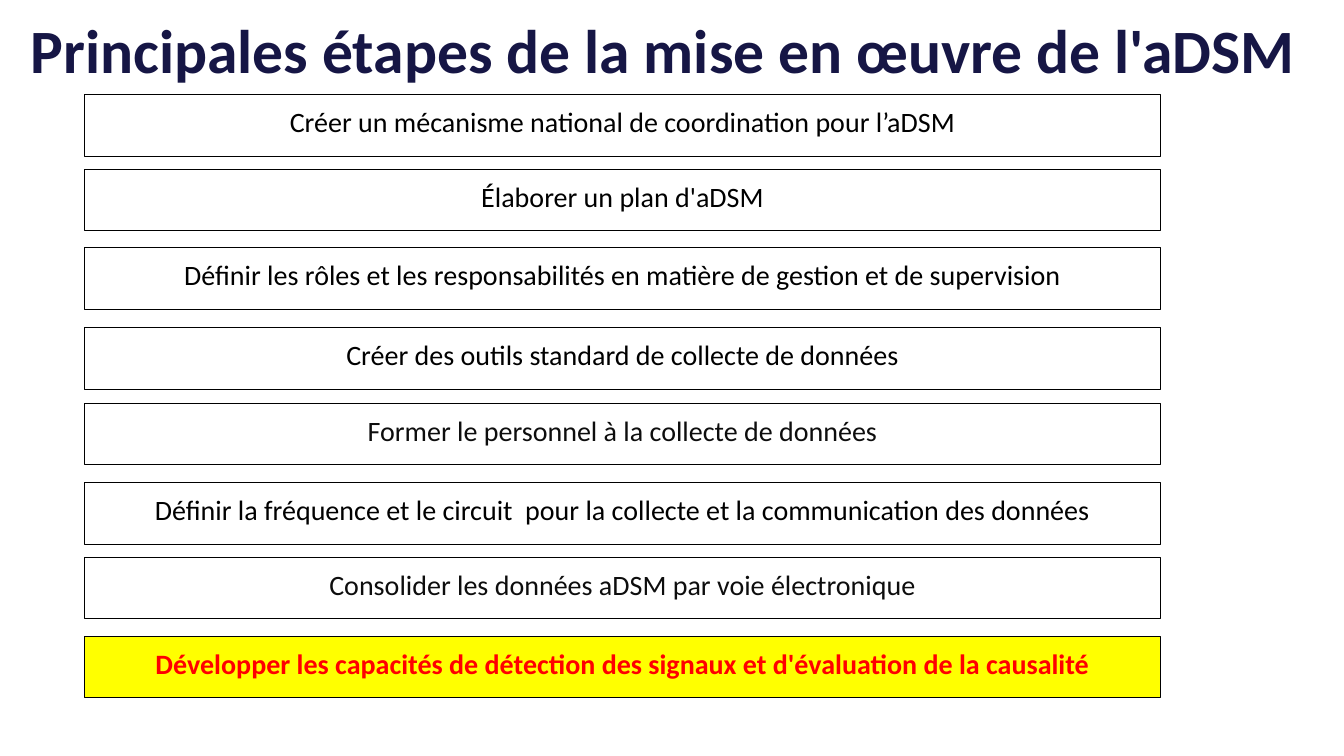
import pptx
import pptx.dml.color
import pptx.enum.shapes
import pptx.enum.text
import pptx.util

Inches = pptx.util.Inches
Pt = pptx.util.Pt
ANCHOR = pptx.enum.text.MSO_ANCHOR

COLORS = {
    "navy": "161645",
    "black": "000000",
    "charcoal": "0D0D0D",
    "white": "FFFFFF",
    "yellow": "FFFF00",
    "red": "FF0000",
}

TITLE = "Principales étapes de la mise en œuvre de l'aDSM"
PLAIN = {"color": "black"}
FILLED = {"fill": "white", "color": "charcoal"}
HIGHLIGHT = {"fill": "yellow", "color": "red", "bold": True}
STEPS = [
    (0.94, "Créer un mécanisme national de coordination pour l’aDSM", PLAIN),
    (1.68, "Élaborer un plan d'aDSM", PLAIN),
    (2.46, "Définir les rôles et les responsabilités en matière de gestion et de supervision", PLAIN),
    (3.25, "Créer des outils standard de collecte de données", PLAIN),
    (4.0, "Former le personnel à la collecte de données", FILLED),
    (4.79, "Définir la fréquence et le circuit  pour la collecte et la communication des données", PLAIN),
    (5.53, "Consolider les données aDSM par voie électronique", FILLED),
    (6.31, "Développer les capacités de détection des signaux et d'évaluation de la causalité", HIGHLIGHT),
]


def rgb(name):
    """Return the named colour as an RGBColor."""
    return pptx.dml.color.RGBColor.from_string(COLORS[name])


def write_text(sp, text, size=20, color="black", bold=False, anchor=ANCHOR.TOP, spacing=None, after=None):
    """Write one centred paragraph into a shape."""
    tf = sp.text_frame
    tf.word_wrap = True
    tf.vertical_anchor = anchor
    p = tf.paragraphs[0]
    p.alignment = pptx.enum.text.PP_ALIGN.CENTER
    if spacing is not None:
        p.line_spacing = spacing
    if after is not None:
        p.space_after = Pt(after)
    r = p.add_run()
    r.text = text
    r.font.name = "Calibri"
    r.font.size = Pt(size)
    r.font.bold = bold
    r.font.color.rgb = rgb(color)


def add_title(s, left, top, width, height):
    """Place the slide title in the given box."""
    sp = s.shapes.add_textbox(Inches(left), Inches(top), Inches(width), Inches(height))
    write_text(sp, TITLE, size=44, color="navy", bold=True, anchor=ANCHOR.MIDDLE)


def add_step(s, left, top, width, height, text, fill=None, **text_format):
    """Place one outlined step in the given box."""
    sp = s.shapes.add_shape(pptx.enum.shapes.MSO_SHAPE.RECTANGLE,
                            Inches(left), Inches(top), Inches(width), Inches(height))
    sp.shadow.inherit = False
    if fill:
        sp.fill.solid()
        sp.fill.fore_color.rgb = rgb(fill)
    else:
        sp.fill.background()
    sp.line.color.rgb = rgb("black")
    sp.line.width = Pt(0.75)
    write_text(sp, text, spacing=1.15, after=10, **text_format)


def main():
    """Build and save the slide."""
    prs = pptx.Presentation()
    prs.slide_width = Inches(13.33)
    prs.slide_height = Inches(7.5)
    s = prs.slides.add_slide(prs.slide_layouts[6])
    add_title(s, 0.13, 0.05, 12.91, 0.87)
    for top, text, style in STEPS:
        add_step(s, 0.84, top, 10.67, 0.61, text, **style)
    prs.save("out.pptx")


if __name__ == "__main__":
    main()
